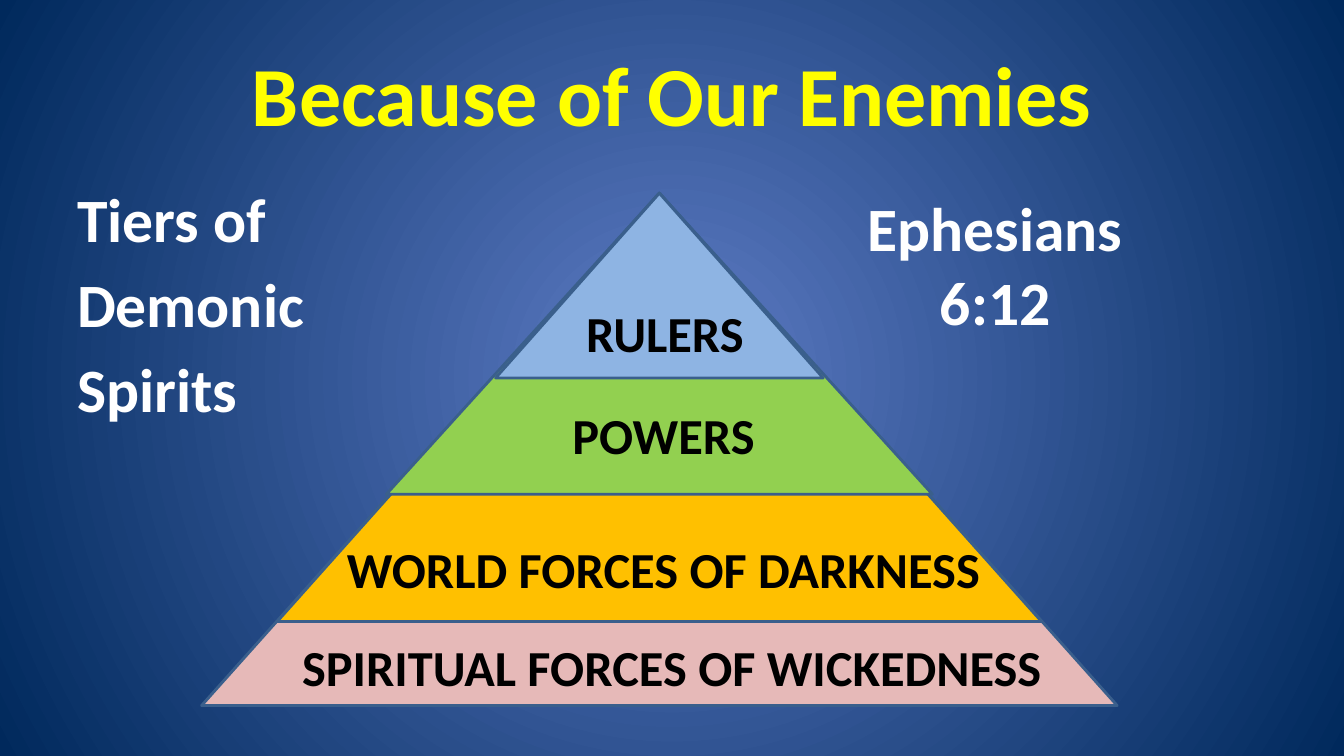
from dataclasses import dataclass

from lxml.etree import SubElement
from pptx import Presentation
from pptx.dml.color import RGBColor
from pptx.enum.shapes import MSO_SHAPE as Shape
from pptx.enum.text import MSO_ANCHOR as Anchor, PP_ALIGN as Align
from pptx.oxml.ns import qn
from pptx.slide import Slide
from pptx.util import Pt


@dataclass
class Tier:
    width: float
    height: float
    fill: str


@dataclass
class Label:
    lines: list[str]
    left: float
    top: float
    width: float
    height: float
    size: float
    color: str
    align: Align = Align.CENTER
    anchor: Anchor = Anchor.TOP
    space: float = 0


# All tiers share one apex; the widest is drawn first
APEX_X, APEX_Y = 471, 138
EDGE = "3A5F8C"
TIERS = [
    Tier(654, 366, "E6B9B8"),
    Tier(546, 306, "FFC000"),
    Tier(390, 215, "92D050"),
    Tier(234, 132, "8EB4E3"),
]


def name_tier(text: str, left: float, top: float, width: float) -> Label:
    return Label([text], left, top, width, 51, 36, "000000")


LABELS = [
    Label(["Because of Our Enemies"], 120, 21.6, 720, 90, 60, "FFFF00",
          anchor=Anchor.MIDDLE),
    Label(["Tiers of", "Demonic", "Spirits"], 48, 126, 864, 356.4, 44,
          "FFFFFF", Align.LEFT, space=7.7),
    name_tier("RULERS", 394, 212.4, 162),
    name_tier("POWERS", 390, 285, 168),
    name_tier("WORLD FORCES OF DARKNESS", 114, 381, 720),
    name_tier("SPIRITUAL FORCES OF WICKEDNESS", 120, 451, 720),
    Label(["Ephesians 6:12"], 606, 132, 210, 114, 44, "FFFFFF"),
]


def rgb(code: str) -> RGBColor:
    return RGBColor.from_string(code)


def paint_back(slide: Slide, inner: str, outer: str) -> None:
    fill = slide.background.fill
    fill.gradient()
    for stop, code in zip(fill.gradient_stops, (inner, outer)):
        stop.color.rgb = rgb(code)
    # Turn the linear gradient into a circle from the centre
    grad = slide.element.find(".//" + qn("a:gradFill"))
    grad.remove(grad.find(qn("a:lin")))
    circle = SubElement(grad, qn("a:path"), {"path": "circle"})
    SubElement(circle, qn("a:fillToRect"),
               {side: "50000" for side in "ltrb"})


def draw_tier(slide: Slide, tier: Tier) -> None:
    shape = slide.shapes.add_shape(
        Shape.ISOSCELES_TRIANGLE, Pt(APEX_X - tier.width / 2), Pt(APEX_Y),
        Pt(tier.width), Pt(tier.height))
    shape.shadow.inherit = False
    shape.fill.solid()
    shape.fill.fore_color.rgb = rgb(tier.fill)
    shape.line.color.rgb = rgb(EDGE)
    shape.line.width = Pt(2)


def draw_label(slide: Slide, label: Label) -> None:
    box = slide.shapes.add_textbox(
        Pt(label.left), Pt(label.top), Pt(label.width), Pt(label.height))
    frame = box.text_frame
    frame.word_wrap = True
    frame.vertical_anchor = label.anchor
    frame.text = "\n".join(label.lines)
    for para in frame.paragraphs:
        para.alignment = label.align
        para.space_before = Pt(label.space)
        font = para.font
        font.name = "Calibri"
        font.size = Pt(label.size)
        font.bold = True
        font.color.rgb = rgb(label.color)


def main() -> None:
    deck = Presentation()
    deck.slide_width, deck.slide_height = Pt(960), Pt(540)
    slide = deck.slides.add_slide(deck.slide_layouts[6])
    paint_back(slide, "5E7CC5", "00295C")

    # Pyramid
    for tier in TIERS:
        draw_tier(slide, tier)

    # Title, side texts and tier names
    for label in LABELS:
        draw_label(slide, label)

    deck.save("out.pptx")


if __name__ == "__main__":
    main()
